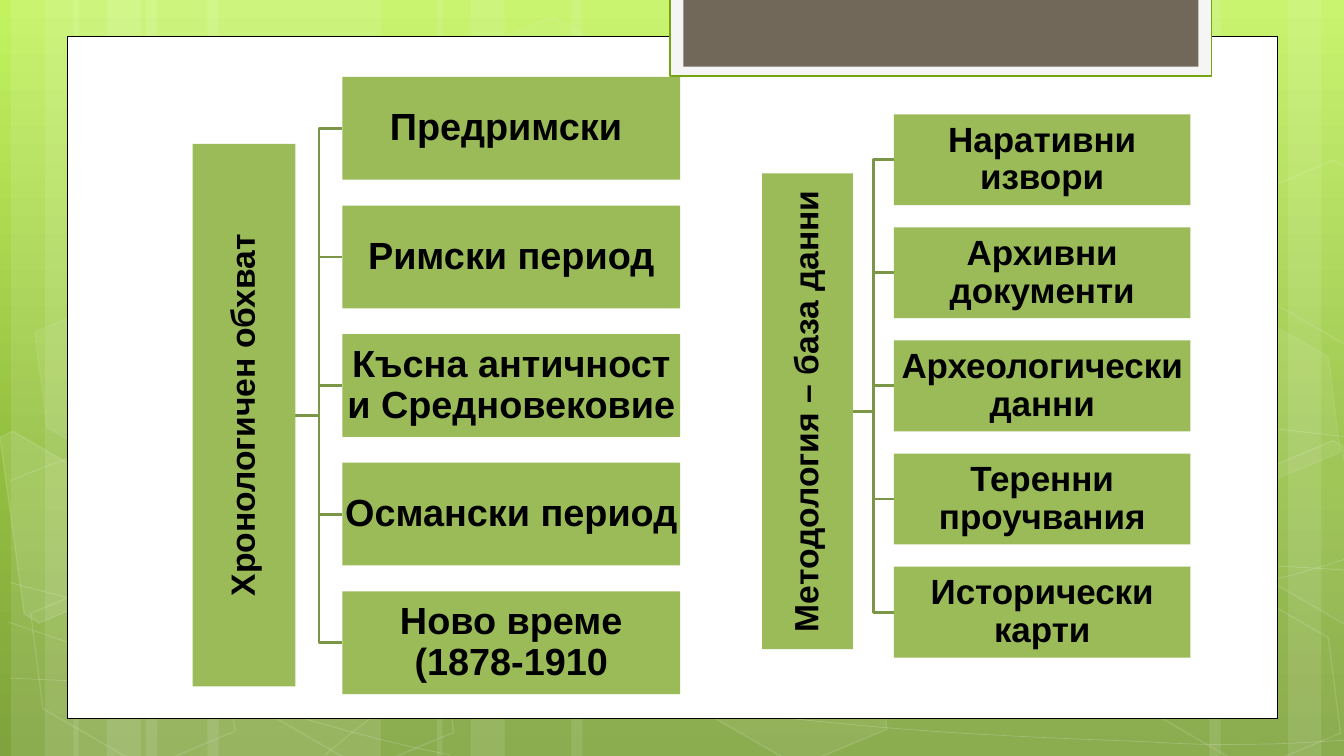
from copy import deepcopy

from lxml import etree
from pptx import Presentation
from pptx.dml.color import RGBColor
from pptx.enum.shapes import MSO_CONNECTOR, MSO_SHAPE
from pptx.enum.text import MSO_ANCHOR, PP_ALIGN
from pptx.oxml.ns import qn
from pptx.util import Cm, Pt

RECTANGLE = MSO_SHAPE.RECTANGLE
HEXAGON = MSO_SHAPE.HEXAGON
ELBOW = MSO_CONNECTOR.ELBOW
MIDDLE = MSO_ANCHOR.MIDDLE
CENTER = PP_ALIGN.CENTER

SLIDE_W, SLIDE_H = 33.87, 19.05
WHITE, BLACK = "FFFFFF", "000000"
BOX_GREEN, LINE_GREEN = "9BBB59", "7C9647"
FONT = "Arial"
CURVE_STEPS = 12

# Left edge and width of each pale vertical band
BANDS = [
    (3.68, 5.92), (0.28, 1.7), (1.14, 2.82), (5.23, 5.92),
    (1.85, 1.7), (2.69, 2.82), (24.84, 5.92), (32.46, 1.7),
    (30.48, 2.82), (14.4, 10.44), (11.02, 1.7), (11.86, 2.82),
]

# Each curve: a start point, then two control points and an end point per segment
CURVES = [
    [(0.25, 17.09), (2.08, 17.17), (3.91, 17.25), (6.45, 17.22),
     (8.99, 17.2), (12.12, 17.15), (15.49, 16.89),
     (18.9, 16.64), (23.7, 16.15), (26.82, 15.67),
     (29.92, 15.19), (33.1, 14.43), (34.11, 14)],
    [(0.25, 12.12), (1.22, 11.71), (2.18, 11.33), (4.11, 10.95),
     (6.05, 10.57), (8.76, 10.01), (11.76, 9.83),
     (14.78, 9.65), (18.42, 9.63), (22.15, 9.83),
     (25.88, 10.03), (32.08, 10.82), (34.11, 11.02)],
    [(0.2, 15.67), (4.29, 17.07), (8.38, 18.47), (11.33, 19.02)],
    [(0.25, 14.68), (1.3, 14.96), (2.36, 15.24), (4.34, 15.65),
     (6.3, 16.03), (9.25, 16.66), (12.07, 17.09),
     (14.91, 17.53), (18.47, 17.98), (21.26, 18.24),
     (24.08, 18.52), (27.1, 18.62), (28.88, 18.69),
     (30.66, 18.8), (31.14, 18.75), (32, 18.75),
     (32.87, 18.72), (33.5, 18.67), (34.11, 18.64)],
    [(8.2, 19.02), (8.79, 18.52), (9.37, 18.01), (10.24, 17.55),
     (11.05, 17.09), (12.19, 16.59), (13.13, 16.23),
     (14.07, 15.88), (14.66, 15.72), (15.9, 15.47),
     (17.15, 15.21), (19.43, 14.86), (20.6, 14.68),
     (21.79, 14.5), (21.97, 14.5), (23.04, 14.45),
     (24.08, 14.38), (25.73, 14.3), (26.9, 14.27),
     (28.07, 14.25), (30.02, 14.27), (30.02, 14.27),
     (30.77, 14.27), (31.51, 14.27), (32.26, 14.27),
     (32.89, 14.3), (33.45, 14.33), (34.06, 14.38)],
]

# Left, top, fill opacity (0 for no fill) and line opacity
HEXAGONS = [
    (11.3, 0.91, 4, 8), (16.81, 14.96, 6, 12), (0.38, 15.01, 0, 12),
    (0.48, 7.92, 7, 8), (5.89, 15.04, 0, 12), (28.24, 15.06, 0, 12),
    (28.24, 7.98, 7, 8),
]

# Corner points and fill opacity of the hexagons cut by the slide edge
CUT_HEXAGONS = [
    ([(0, 11.02), (0.33, 10.87), (2.92, 12.37), (3.23, 14.76),
      (0.99, 15.7), (0.61, 15.47)], 10),
    ([(31.37, 12.04), (33.6, 11.1), (33.83, 11.25), (34.47, 15.88),
      (34.26, 15.95), (31.67, 14.45)], 4),
    ([(31.37, 4.98), (33.6, 4.04), (33.88, 4.19), (34.47, 8.79),
      (34.26, 8.89), (31.67, 7.39)], 0),
]

METHODS = ["Наративни извори", "Архивни документи", "Археологически данни",
           "Теренни проучвания", "Исторически карти"]
PERIODS = ["Предримски ", "Римски период", "Късна античност и Средновековие",
           "Османски период", "Ново време (1878-1910"]


def paint(fill, color, opacity=100):
    """Fill with a colour; an opacity of 0 means no fill."""
    if not opacity:
        fill.background()
        return
    fill.solid()
    fill.fore_color.rgb = RGBColor.from_string(color)
    if opacity < 100:
        color_xml = fill.fore_color._xFill.find(qn("a:srgbClr"))
        etree.SubElement(color_xml, qn("a:alpha"), val=str(opacity * 1000))


def style(shape, fill=WHITE, opacity=100, line=None, weight=1, line_opacity=100):
    shape.shadow.inherit = False
    paint(shape.fill, fill, opacity)
    if line:
        paint(shape.line.fill, line, line_opacity)
        shape.line.width = Pt(weight)
    else:
        shape.line.fill.background()


def add_box(slide, left, top, width, height, kind=RECTANGLE, **look):
    box = slide.shapes.add_shape(kind, Cm(left), Cm(top), Cm(width), Cm(height))
    style(box, **look)
    return box


def add_outline(slide, points, close, **look):
    corners = [(Cm(x), Cm(y)) for x, y in points]
    builder = slide.shapes.build_freeform(*corners[0])
    builder.add_line_segments(corners[1:], close=close)
    style(builder.convert_to_shape(), **look)


def curve_points(knots):
    """Sample a chain of cubic Bézier segments."""
    points = [knots[0]]
    for first in range(0, len(knots) - 1, 3):
        segment = knots[first:first + 4]
        for step in range(1, CURVE_STEPS + 1):
            t = step / CURVE_STEPS
            weights = ((1 - t) ** 3, 3 * t * (1 - t) ** 2, 3 * t * t * (1 - t), t ** 3)
            points.append(tuple(sum(w * knot[axis] for w, knot in zip(weights, segment))
                                for axis in (0, 1)))
    return points


def add_backdrop(slide):
    fill = slide.background.fill
    fill.gradient()
    fill.gradient_angle = 90
    stop_list = fill.gradient_stops[0]._gs.getparent()
    stop_list.insert(1, deepcopy(stop_list[0]))
    for stop, (position, color) in zip(
            fill.gradient_stops, [(0, "80A33D"), (0.38, "92BE3F"), (1, "C2F35F")]):
        stop.position = position
        stop.color.rgb = RGBColor.from_string(color)

    for left, width in BANDS:
        add_box(slide, left, 0, width, SLIDE_H, opacity=10)
    for knots in CURVES:
        add_outline(slide, curve_points(knots), False, opacity=0,
                    line=WHITE, weight=0.5, line_opacity=20)
    for left, top, opacity, line_opacity in HEXAGONS:
        hexagon = add_box(slide, left, top, 5.94, 3.86, HEXAGON, opacity=opacity,
                          line=WHITE, line_opacity=line_opacity)
        hexagon.adjustments[0] = 0.38
        hexagon.rotation = 30
    for corners, opacity in CUT_HEXAGONS:
        add_outline(slide, corners, True, opacity=opacity, line=WHITE, line_opacity=12)


def add_frame(slide):
    add_box(slide, 1.7, 0.91, 30.48, 17.2, line=BLACK, weight=0.5)
    add_box(slide, 16.89, -0.05, 13.64, 1.96, fill="F5F5F5", line="74A510", weight=1.25)
    add_box(slide, 17.22, -0.05, 12.98, 1.73, fill="71685A")


def add_label(slide, text, left, top, width, height, size):
    label = add_box(slide, left, top, width, height, fill=BOX_GREEN)
    frame = label.text_frame
    frame.word_wrap = True
    frame.vertical_anchor = MIDDLE
    frame.margin_left = frame.margin_right = Cm(0.04)
    frame.margin_top = frame.margin_bottom = Cm(0.04)
    frame.text = text
    paragraph = frame.paragraphs[0]
    paragraph.alignment = CENTER
    paragraph.line_spacing = 0.9
    font = paragraph.runs[0].font
    font.name, font.size, font.bold = FONT, Pt(size), True
    font.color.rgb = RGBColor.from_string(BLACK)
    return label


def add_branch(slide, start_x, start_y, end_x, end_y):
    branch = slide.shapes.add_connector(ELBOW, Cm(start_x), Cm(start_y), Cm(end_x), Cm(end_y))
    paint(branch.line.fill, LINE_GREEN)
    branch.line.width = Pt(2)
    etree.SubElement(branch._element.spPr, qn("a:effectLst"))


def add_tree(slide, title, items, center, length, thickness, left, top, width, pitch, size):
    """Draw an upright title bar branching to a column of item boxes."""
    x, y = center
    for row in range(len(items)):
        add_branch(slide, x + thickness / 2, y, left, top + row * pitch + thickness / 2)
    title_bar = add_label(slide, title, x - length / 2, y - thickness / 2,
                          length, thickness, 24)
    title_bar.rotation = 270
    for row, item in enumerate(items):
        add_label(slide, item, left, top + row * pitch, width, thickness, size)


def main():
    deck = Presentation()
    deck.slide_width, deck.slide_height = Cm(SLIDE_W), Cm(SLIDE_H)
    slide = deck.slides.add_slide(deck.slide_layouts[6])
    add_backdrop(slide)
    add_frame(slide)
    add_tree(slide, "Методология – база данни", METHODS, center=(20.35, 10.36), length=11.99,
             thickness=2.29, left=22.53, top=2.88, width=7.47, pitch=2.85, size=25)
    add_tree(slide, "Хронологичен обхват", PERIODS, center=(6.15, 10.46), length=13.67,
             thickness=2.59, left=8.63, top=1.94, width=8.51, pitch=3.24, size=27)
    deck.save("out.pptx")


if __name__ == "__main__":
    main()
